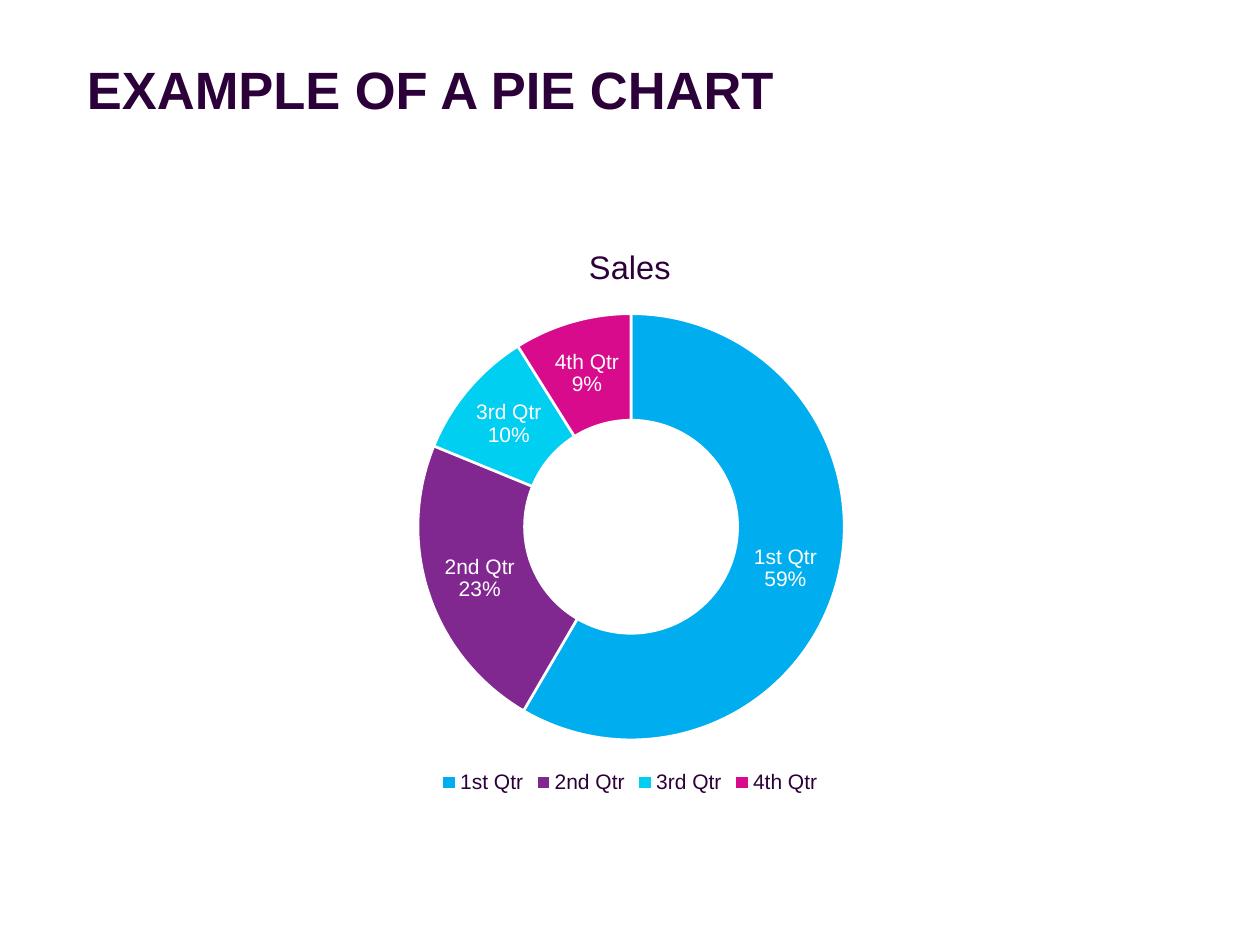
from typing import Any, NamedTuple

from lxml.etree import Element
from pptx import Presentation
from pptx.chart.data import CategoryChartData
from pptx.dml.color import RGBColor
from pptx.enum.chart import XL_CHART_TYPE, XL_LEGEND_POSITION
from pptx.enum.text import MSO_ANCHOR
from pptx.oxml.ns import qn
from pptx.util import Inches, Pt

HEADING_INK = "2C0039"
INK = "2C0038"
WHITE = "FFFFFF"
LEFT, WIDTH = Inches(0.69), Inches(8.62)


class Quarter(NamedTuple):
    label: str
    share: int
    color: str


QUARTERS = [
    Quarter("1st Qtr", 59, "00AEEF"),
    Quarter("2nd Qtr", 23, "812890"),
    Quarter("3rd Qtr", 10, "00CFF1"),
    Quarter("4th Qtr", 9, "D80B8C"),
]


def rgb(color: str) -> RGBColor:
    return RGBColor.from_string(color)


def set_all(target: Any, values: dict[str, Any]) -> None:
    for name, value in values.items():
        setattr(target, name, value)


def style_font(font: Any, size: float, color: str, bold: bool = False) -> None:
    set_all(font, {"name": "Arial", "size": Pt(size), "bold": bold})
    font.color.rgb = rgb(color)


def add_heading(slide: Any, text: str) -> None:
    heading = slide.shapes.add_textbox(LEFT, Inches(0.55), WIDTH, Inches(1.02))
    set_all(heading.text_frame, {
        "word_wrap": True, "vertical_anchor": MSO_ANCHOR.TOP,
        "margin_left": 0, "margin_right": 0, "margin_top": 0, "margin_bottom": 0,
    })
    line = heading.text_frame.paragraphs[0]
    line.line_spacing = 0.8
    run = line.add_run()
    run.text = text
    style_font(run.font, 30, HEADING_INK, bold=True)


def color_slices(sales: Any) -> None:
    for index, quarter in enumerate(QUARTERS):
        wedge = sales.points[index].format
        wedge.fill.solid()
        wedge.fill.fore_color.rgb = rgb(quarter.color)
        wedge.line.color.rgb = rgb(WHITE)
        wedge.line.width = Pt(1.5)


def label_slices(sales: Any) -> None:
    labels = sales.data_labels
    set_all(labels, {
        "show_category_name": True, "show_value": True, "show_percentage": False,
        "number_format": '0"%"', "number_format_is_linked": False,
    })
    style_font(labels.font, 12, WHITE)
    separator = Element(qn("c:separator"))
    separator.text = "\n"
    labels._element.find(qn("c:showBubbleSize")).addnext(separator)


def add_sales_chart(slide: Any) -> None:
    sales_data = CategoryChartData()
    sales_data.categories = [quarter.label for quarter in QUARTERS]
    sales_data.add_series("Sales", [quarter.share for quarter in QUARTERS])
    chart = slide.shapes.add_chart(
        XL_CHART_TYPE.DOUGHNUT, LEFT, Inches(1.76), WIDTH, Inches(4.58), sales_data
    ).chart
    style_font(chart.font, 10, INK)

    set_all(chart, {"has_title": True, "has_legend": True})
    caption = chart.chart_title.text_frame.paragraphs[0].add_run()
    caption.text = "Sales"
    style_font(caption.font, 18.6, INK)
    chart.chart_title.include_in_layout = False

    set_all(chart.legend, {
        "position": XL_LEGEND_POSITION.BOTTOM, "include_in_layout": False,
    })
    style_font(chart.legend.font, 12, INK)

    sales = chart.plots[0].series[0]
    color_slices(sales)
    label_slices(sales)


def main() -> None:
    deck = Presentation()
    set_all(deck, {"slide_width": Inches(10), "slide_height": Inches(7.5)})
    slide = deck.slides.add_slide(deck.slide_layouts[6])
    add_heading(slide, "EXAMPLE OF A PIE CHART")
    add_sales_chart(slide)
    deck.save("out.pptx")


if __name__ == "__main__":
    main()
